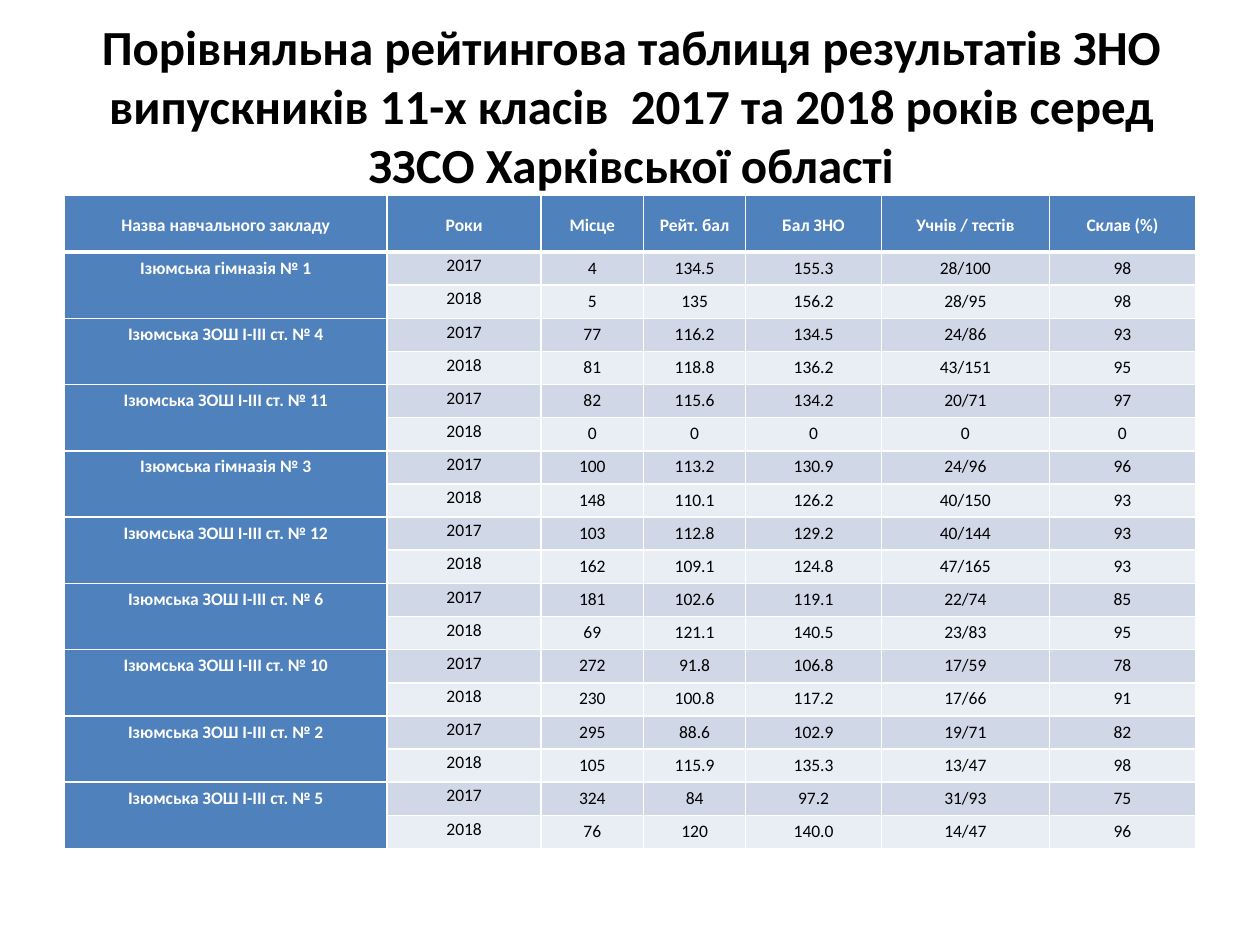
"""Build a slide comparing school exam ratings for 2017 and 2018."""
import lxml.etree
import pptx
import pptx.dml.color
import pptx.enum.text
import pptx.oxml.ns
import pptx.util

Pt = pptx.util.Pt
BLUE, WHITE, BLACK = "4F81BD", "FFFFFF", "000000"
YEAR_FILLS = {"2017": "D0D8E8", "2018": "E9EDF4"}

TITLE = ("Порівняльна рейтингова таблиця результатів ЗНО випускників "
         "11-х класів  2017 та 2018 років серед ЗЗСО Харківської області")
HEADERS = ["Назва навчального закладу", "Роки", "Місце", "Рейт. бал",
           "Бал ЗНО", "Учнів / тестів", "Склав (%)"]
SCHOOLS = [
    ("Ізюмська гімназія № 1", "4 134.5 155.3 28/100 98", "5 135 156.2 28/95 98"),
    ("Ізюмська ЗОШ I-III ст. № 4", "77 116.2 134.5 24/86 93", "81 118.8 136.2 43/151 95"),
    ("Ізюмська ЗОШ I-III ст. № 11", "82 115.6 134.2 20/71 97", "0 0 0 0 0"),
    ("Ізюмська гімназія № 3", "100 113.2 130.9 24/96 96", "148 110.1 126.2 40/150 93"),
    ("Ізюмська ЗОШ I-III ст. № 12", "103 112.8 129.2 40/144 93", "162 109.1 124.8 47/165 93"),
    ("Ізюмська ЗОШ I-III ст. № 6", "181 102.6 119.1 22/74 85", "69 121.1 140.5 23/83 95"),
    ("Ізюмська ЗОШ I-III ст. № 10", "272 91.8 106.8 17/59 78", "230 100.8 117.2 17/66 91"),
    ("Ізюмська ЗОШ I-III ст. № 2", "295 88.6 102.9 19/71 82", "105 115.9 135.3 13/47 98"),
    ("Ізюмська ЗОШ I-III ст. № 5", "324 84 97.2 31/93 75", "76 120 140.0 14/47 96"),
]
COLUMN_WIDTHS = [184.5, 88, 58.5, 58.5, 77.5, 96, 83.5]
HEADER_HEIGHT, ROW_HEIGHT = 32.4, 18.96


def rgb(color):
    return pptx.dml.color.RGBColor.from_string(color)


def write_text(frame, text, size, color, bold):
    paragraph = frame.paragraphs[0]
    paragraph.alignment = pptx.enum.text.PP_ALIGN.CENTER
    run = paragraph.add_run()
    run.text = text
    run.font.name = "Calibri"
    run.font.size = Pt(size)
    run.font.bold = bold
    run.font.color.rgb = rgb(color)
    return paragraph


presentation = pptx.Presentation()
presentation.slide_width, presentation.slide_height = Pt(720), Pt(540)
slide = presentation.slides.add_slide(presentation.slide_layouts[6])

title = slide.shapes.add_textbox(Pt(36.7), Pt(15), Pt(648), Pt(90))
title.text_frame.word_wrap = True
title.text_frame.vertical_anchor = pptx.enum.text.MSO_ANCHOR.MIDDLE
write_text(title.text_frame, TITLE, 28, BLACK, True)

rows = [HEADERS]
for school, *results in SCHOOLS:
    for year, result in zip(YEAR_FILLS, results):
        rows.append([school if year == "2017" else "", year, *result.split()])

table = slide.shapes.add_table(
    len(rows), len(HEADERS), Pt(36.7), Pt(111.6), Pt(sum(COLUMN_WIDTHS)),
    Pt(HEADER_HEIGHT + ROW_HEIGHT * (len(rows) - 1))).table
for column, width in zip(table.columns, COLUMN_WIDTHS):
    column.width = Pt(width)

for row_index, values in enumerate(rows):
    is_header = row_index == 0
    table.rows[row_index].height = Pt(HEADER_HEIGHT if is_header else ROW_HEIGHT)
    for column_index, value in enumerate(values):
        cell = table.cell(row_index, column_index)
        is_blue = is_header or column_index == 0
        side_margin, end_margin = (0, 0) if column_index == 1 else (6.5, 1.4)
        cell.margin_left = cell.margin_right = Pt(side_margin)
        cell.margin_top = cell.margin_bottom = Pt(end_margin)
        cell.vertical_anchor = (pptx.enum.text.MSO_ANCHOR.MIDDLE if is_header
                                else pptx.enum.text.MSO_ANCHOR.TOP)

        properties = cell._tc.get_or_add_tcPr()
        for side in ("L", "R", "T", "B"):
            under_header = (row_index, side) in ((0, "B"), (1, "T"))
            border = lxml.etree.SubElement(properties, pptx.oxml.ns.qn(f"a:ln{side}"),
                                           w=str(Pt(3 if under_header else 1)))
            border_fill = lxml.etree.SubElement(border, pptx.oxml.ns.qn("a:solidFill"))
            lxml.etree.SubElement(border_fill, pptx.oxml.ns.qn("a:srgbClr"), val=WHITE)
        cell.fill.solid()
        cell.fill.fore_color.rgb = rgb(BLUE if is_blue else YEAR_FILLS[values[1]])

        if value:
            paragraph = write_text(cell.text_frame, value, 10,
                                   WHITE if is_blue else BLACK, is_blue)
            paragraph.line_spacing = 1.15

for row_index in range(1, len(rows), 2):
    table.cell(row_index, 0).merge(table.cell(row_index + 1, 0))

presentation.save("out.pptx")
